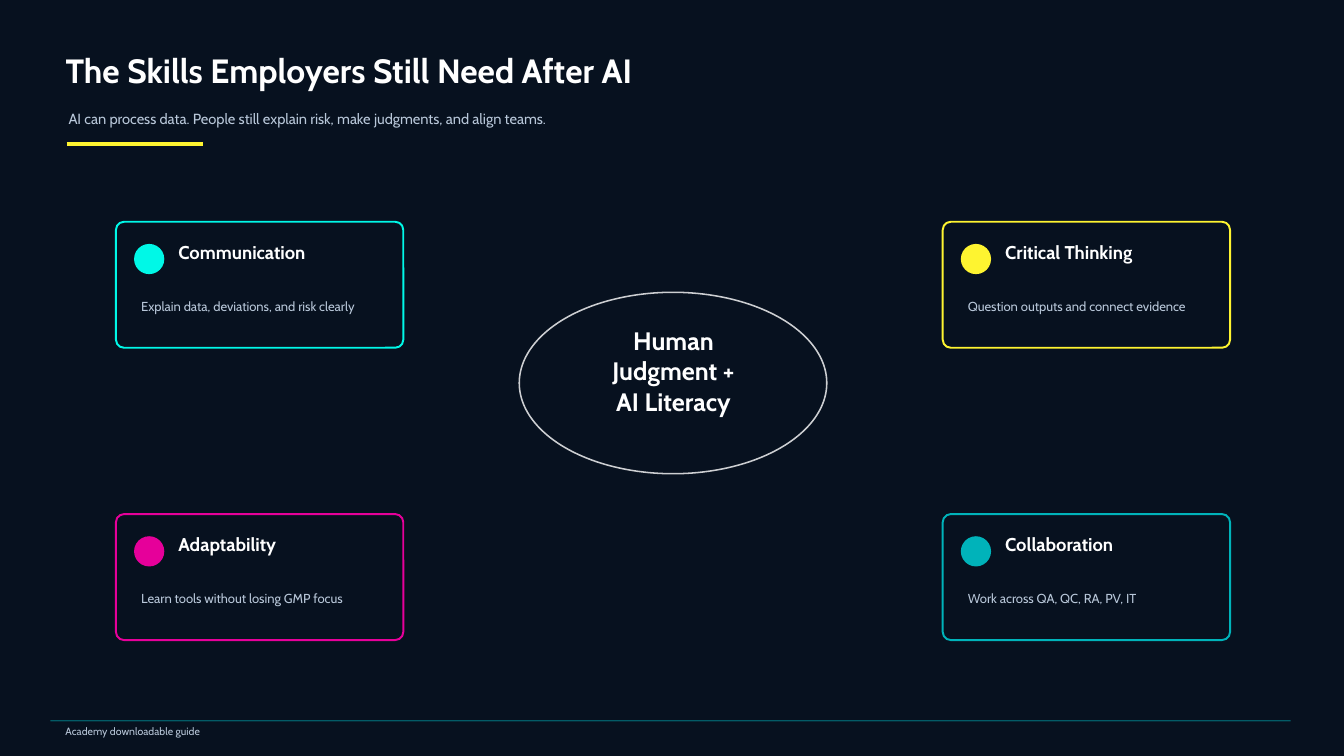
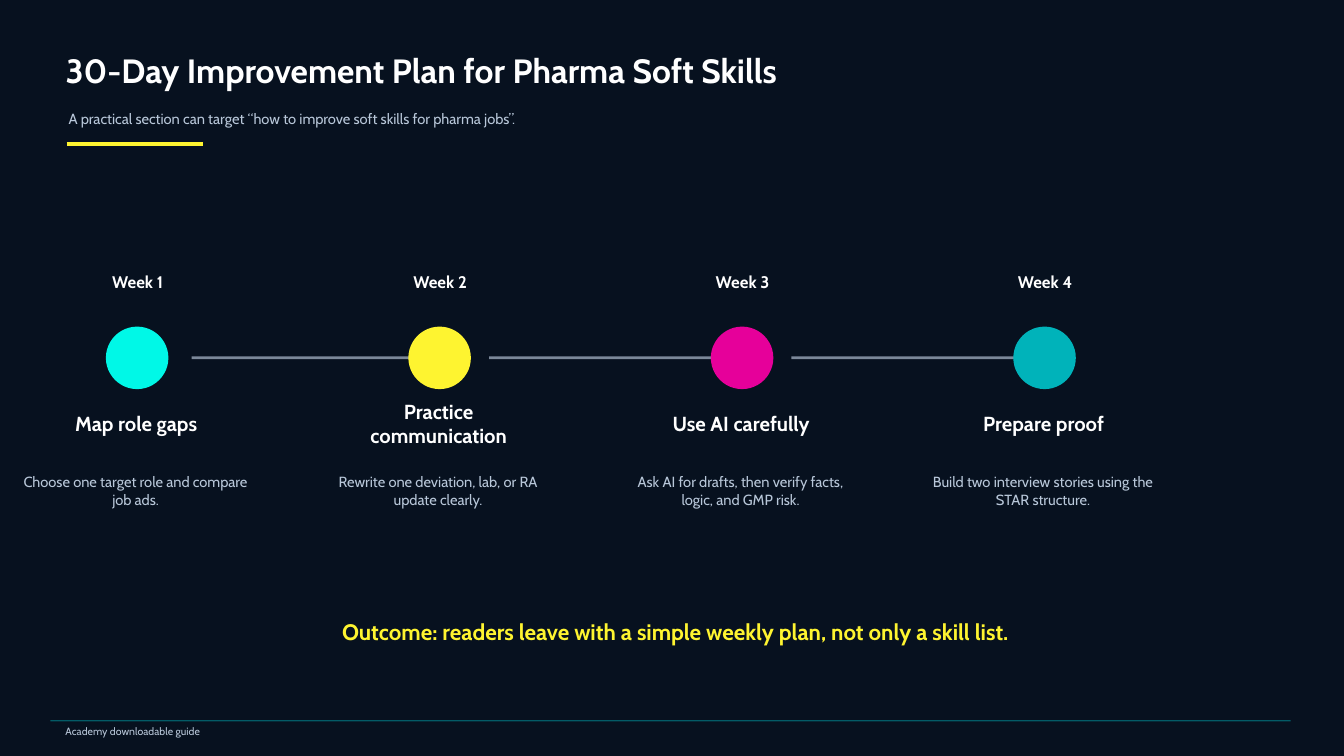
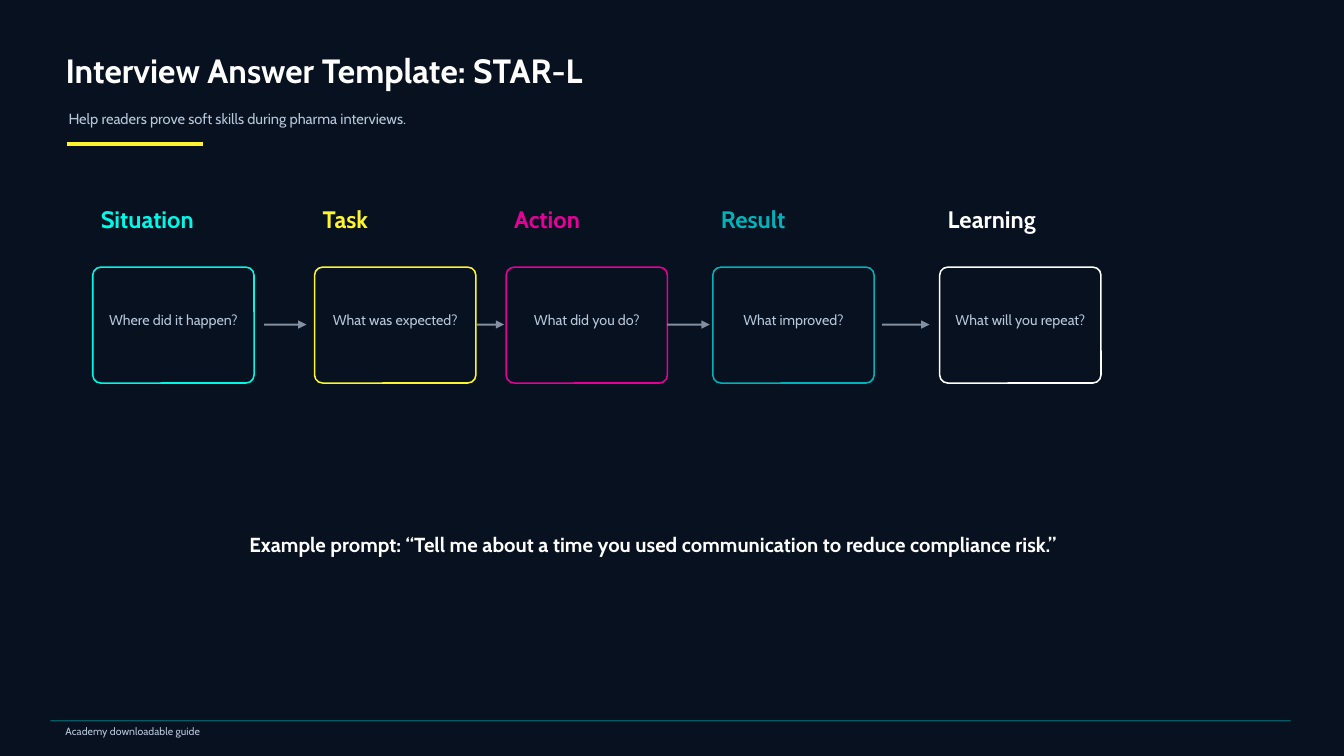
from itertools import product

from lxml.etree import SubElement
from pptx import Presentation
from pptx.dml.color import RGBColor
from pptx.enum.shapes import MSO_CONNECTOR, MSO_SHAPE
from pptx.enum.text import MSO_ANCHOR, MSO_AUTO_SIZE, PP_ALIGN
from pptx.oxml.ns import qn
from pptx.util import Inches, Pt

COLORS = {
    "night": "07111F",
    "white": "FFFFFF",
    "mist": "B8C7D9",
    "cyan": "00F8E7",
    "yellow": "FEF430",
    "pink": "E6009A",
    "teal": "00B3BA",
}
ACCENTS = ["cyan", "yellow", "pink", "teal"]
FONT = "Cabin"
STYLES = {
    "title": {"size": Pt(24), "bold": True},
    "hub": {"size": Pt(18), "bold": True},
    "label": {"size": Pt(17), "bold": True},
    "outcome": {"size": Pt(16), "bold": True},
    "step": {"size": Pt(14.5), "bold": True},
    "card": {"size": Pt(13.2), "bold": True},
    "week": {"size": Pt(12), "bold": True},
    "body": {"size": Pt(10.5)},
    "hint": {"size": Pt(10.2)},
    "detail": {"size": Pt(9.3)},
    "footer": {"size": Pt(7.5)},
}
FRAME = {
    "margin_left": 0,
    "margin_top": 0,
    "margin_right": 0,
    "margin_bottom": 0,
    "word_wrap": True,
    "auto_size": MSO_AUTO_SIZE.NONE,
    "vertical_anchor": MSO_ANCHOR.MIDDLE,
}
RADIUS = 0.08


def rgb(name):
    return RGBColor.from_string(COLORS[name])


def apply(target, values):
    for key, value in values.items():
        setattr(target, key, value)


def fill_text(shape, text, style, color, align=PP_ALIGN.LEFT):
    """Write text into a shape, one paragraph per line."""
    frame = shape.text_frame
    frame.text = text
    apply(frame, FRAME)
    for para in frame.paragraphs:
        para.alignment = align
        apply(para.font, {"name": FONT, **STYLES[style]})
        para.font.color.rgb = rgb(color)


def add_text(slide, box, text, style, color="white", align=PP_ALIGN.LEFT):
    shape = slide.shapes.add_textbox(*map(Inches, box))
    fill_text(shape, text, style, color, align)


def add_center(slide, box, text, style, color="white"):
    add_text(slide, box, text, style, color, PP_ALIGN.CENTER)


def set_alpha(shape, percent):
    """Set the opacity of the shape's line."""
    color = shape.line.fill._xPr.find(".//" + qn("a:srgbClr"))
    SubElement(color, qn("a:alpha"), val=str(percent * 1000))


def add_shape(slide, kind, box, fill, line=None, width=1.1):
    shape = slide.shapes.add_shape(kind, *map(Inches, box))
    shape.shadow.inherit = False
    shape.fill.solid()
    shape.fill.fore_color.rgb = rgb(fill)
    if line:
        shape.line.color.rgb = rgb(line)
        shape.line.width = Pt(width)
    else:
        shape.line.fill.background()
    return shape


def add_dot(slide, left, top, size, color):
    add_shape(slide, MSO_SHAPE.OVAL, (left, top, size, size), color)


def add_panel(slide, box, color, width):
    """Add an outlined box whose corner radius is the same at any height."""
    panel = add_shape(slide, MSO_SHAPE.ROUNDED_RECTANGLE, box, "night", color, width)
    panel.adjustments[0] = RADIUS / box[3]


def add_line(slide, start, end, top, color, width, alpha=100, arrow=False):
    """Add a level line from start to end."""
    ends = map(Inches, (start, top, end, top))
    line = slide.shapes.add_connector(MSO_CONNECTOR.STRAIGHT, *ends)
    line.line.color.rgb = rgb(color)
    line.line.width = Pt(width)
    if alpha < 100:
        set_alpha(line, alpha)
    props = line.element.spPr
    if arrow:
        SubElement(props.find(qn("a:ln")), qn("a:tailEnd"), type="triangle")
    SubElement(props, qn("a:effectLst"))


def add_slide(deck, title, lead):
    """Add a slide with the shared title, lead, accent rule and footer."""
    slide = deck.slides.add_slide(deck.slide_layouts[5])
    slide.background.fill.solid()
    slide.background.fill.fore_color.rgb = rgb("night")
    head = slide.shapes.title
    box = map(Inches, (0.65, 0.42, 8.8, 0.55))
    apply(head, dict(zip(("left", "top", "width", "height"), box)))
    fill_text(head, title, "title", "white")
    add_text(slide, (0.68, 1.02, 8.8, 0.32), lead, "body", "mist")
    add_line(slide, 0.66, 2.01, 1.43, "yellow", 3)
    add_line(slide, 0.5, 12.8, 7.15, "teal", 0.8, 45)
    add_text(slide, (0.65, 7.18, 3.5, 0.16), "Academy downloadable guide", "footer", "mist")
    return slide


def add_card(slide, left, top, color, name, detail):
    add_panel(slide, (left, top, 2.85, 1.25), color, 1.4)
    add_dot(slide, left + 0.18, top + 0.22, 0.3, color)
    add_text(slide, (left + 0.62, top + 0.18, 2, 0.24), name, "card")
    add_text(slide, (left + 0.25, top + 0.66, 2.35, 0.35), detail, "detail", "mist")


def add_week(slide, index, color, name, detail):
    left = 1.05 + 3 * index
    add_dot(slide, left, 3.24, 0.62, color)
    add_center(slide, (left - 0.16, 2.68, 0.95, 0.24), f"Week {index + 1}", "week")
    add_center(slide, (left - 0.56, 4.05, 1.72, 0.3), name, "step")
    add_center(slide, (left - 0.88, 4.55, 2.35, 0.64), detail, "body", "mist")


def add_stage(slide, left, color, name, hint):
    add_text(slide, (left, 2, 1.6, 0.35), name, "label", color)
    add_panel(slide, (left - 0.08, 2.65, 1.6, 1.15), color, 1.1)
    add_center(slide, (left + 0.02, 3, 1.4, 0.34), hint, "hint", "mist")


def build_skills(deck):
    slide = add_slide(
        deck,
        "The Skills Employers Still Need After AI",
        "AI can process data. People still explain risk, make judgments, and align teams.",
    )
    hub = add_shape(slide, MSO_SHAPE.OVAL, (5.15, 2.9, 3.05, 1.8), "night", "white")
    set_alpha(hub, 80)
    add_center(slide, (5.48, 3.18, 2.4, 1), "Human\nJudgment +\nAI Literacy", "hub")
    cards = [
        ("Communication", "Explain data, deviations, and risk clearly"),
        ("Critical Thinking", "Question outputs and connect evidence"),
        ("Adaptability", "Learn tools without losing GMP focus"),
        ("Collaboration", "Work across QA, QC, RA, PV, IT"),
    ]
    spots = product((2.2, 5.1), (1.15, 9.35))
    for (top, left), color, card in zip(spots, ACCENTS, cards):
        add_card(slide, left, top, color, *card)


def build_plan(deck):
    slide = add_slide(
        deck,
        "30-Day Improvement Plan for Pharma Soft Skills",
        "A practical section can target “how to improve soft skills for pharma jobs”.",
    )
    for start in (1.9, 4.85, 7.85):
        add_line(slide, start, start + 2.3, 3.55, "mist", 2, 65)
    weeks = [
        ("Map role gaps", "Choose one target role and compare job ads."),
        ("Practice communication", "Rewrite one deviation, lab, or RA update clearly."),
        ("Use AI carefully", "Ask AI for drafts, then verify facts, logic, and GMP risk."),
        ("Prepare proof", "Build two interview stories using the STAR structure."),
    ]
    for index, (color, week) in enumerate(zip(ACCENTS, weeks)):
        add_week(slide, index, color, *week)
    add_center(
        slide,
        (2.1, 6.08, 9.2, 0.38),
        "Outcome: readers leave with a simple weekly plan, not only a skill list.",
        "outcome",
        "yellow",
    )


def build_star(deck):
    slide = add_slide(
        deck,
        "Interview Answer Template: STAR-L",
        "Help readers prove soft skills during pharma interviews.",
    )
    stages = [
        (1, "Situation", "Where did it happen?"),
        (3.2, "Task", "What was expected?"),
        (5.1, "Action", "What did you do?"),
        (7.15, "Result", "What improved?"),
        (9.4, "Learning", "What will you repeat?"),
    ]
    for (left, name, hint), color in zip(stages, ACCENTS + ["white"]):
        add_stage(slide, left, color, name, hint)
    for start, end in [(2.62, 3.04), (4.73, 5), (6.62, 7.04), (8.75, 9.22)]:
        add_line(slide, start, end, 3.22, "mist", 1.4, 70, arrow=True)
    add_center(
        slide,
        (1.25, 5.26, 10.45, 0.28),
        "Example prompt: “Tell me about a time you used communication to reduce compliance risk.”",
        "step",
    )


def main():
    deck = Presentation()
    deck.slide_width = Inches(13.33)
    deck.slide_height = Inches(7.5)
    for build in (build_skills, build_plan, build_star):
        build(deck)
    deck.save("out.pptx")


if __name__ == "__main__":
    main()
